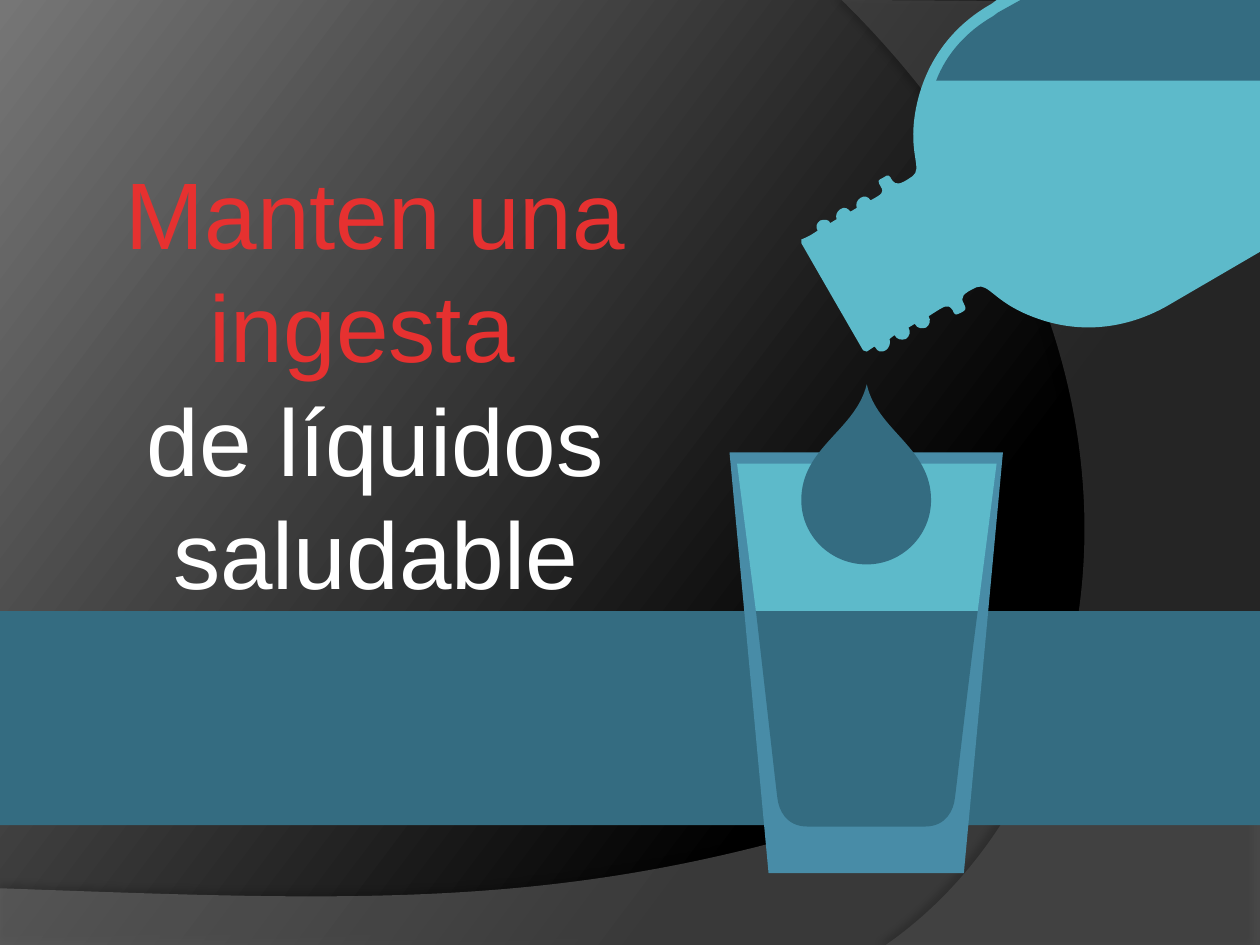
from collections import namedtuple
from copy import deepcopy
from dataclasses import dataclass

from lxml import etree
from pptx import Presentation
from pptx.dml.color import RGBColor
from pptx.enum.shapes import MSO_SHAPE
from pptx.enum.text import MSO_ANCHOR, MSO_AUTO_SIZE, PP_ALIGN
from pptx.oxml.ns import qn
from pptx.util import Inches, Pt

RECTANGLE = MSO_SHAPE.RECTANGLE
CENTER = PP_ALIGN.CENTER
TOP = MSO_ANCHOR.TOP
FIT_SHAPE = MSO_AUTO_SIZE.SHAPE_TO_FIT_TEXT
TITLE_ONLY = 5

Box = namedtuple("Box", "left top width height")


@dataclass(frozen=True)
class Theme:
    font: str = "Arial"
    title_size: int = 54
    black: str = "000000"
    glow: str = "767676"
    low_wave: str = "7F7F7F"
    side_wave: str = "5E5E5E"
    deep_water: str = "346C81"
    light_water: str = "5DBACA"
    glass: str = "488CA7"
    red: str = "E63130"
    white: str = "FFFFFF"


THEME = Theme()


def rgb(color):
    return RGBColor.from_string(color)


def inches_box(left, top, width, height):
    return Box(Inches(left), Inches(top), Inches(width), Inches(height))


def paint(shape, color):
    shape.shadow.inherit = False
    shape.fill.solid()
    shape.fill.fore_color.rgb = rgb(color)
    shape.line.fill.background()


def bend(shape, box, segments):
    lines = shape.element.findall(".//" + qn("a:lnTo"))
    for line, segment in zip(lines, segments):
        if len(segment) == 2:
            continue
        line.tag = qn("a:cubicBezTo")
        line.clear()
        for x, y in zip(segment[::2], segment[1::2]):
            etree.SubElement(
                line, qn("a:pt"),
                x=str(box.left + Inches(x) - shape.left),
                y=str(box.top + Inches(y) - shape.top))


def add_outline(page, box, color, segments):
    ends = [(box.left + Inches(part[-2]), box.top + Inches(part[-1])) for part in segments]
    builder = page.shapes.build_freeform(*ends[0], scale=1.0)
    builder.add_line_segments(ends[1:], close=True)
    shape = builder.convert_to_shape()
    bend(shape, box, segments[1:])
    paint(shape, color)
    return shape


def set_opacity(color_element, percent):
    etree.SubElement(color_element, qn("a:alpha"), val=str(percent * 1000))


def soften(shape, opacity, shadow_opacity, distance, angle):
    properties = shape.element.spPr
    set_opacity(properties.find(qn("a:solidFill")).find(qn("a:srgbClr")), opacity)
    shadow = etree.SubElement(
        properties.find(qn("a:effectLst")), qn("a:outerShdw"),
        blurRad=str(Pt(4)), dist=str(Pt(distance)), dir=str(angle * 60000),
        algn="ctr", rotWithShape="0")
    set_opacity(etree.SubElement(shadow, qn("a:srgbClr"), val=THEME.black), shadow_opacity)


def set_background(page):
    fill = page.background.fill
    fill.gradient()
    fill.gradient_angle = 143
    first, last = fill.gradient_stops
    first.color.rgb, last.color.rgb = rgb(THEME.black), rgb(THEME.glow)
    first.position, last.position = 0, 1
    stop = page.element.find(".//" + qn("a:gs"))
    middle = deepcopy(stop)
    middle.set("pos", "30000")
    stop.addnext(middle)


def draw_waves(page, box):
    low = add_outline(page, box, THEME.low_wave, [
        (0, 7.05), (0, 7.51), (10, 7.51), (10, 5.2), (5.59, 7.29, 3.91, 7.19, 0, 7.05)])
    soften(low, 45, 35, 3.5, 270)
    side = add_outline(page, box, THEME.side_wave, [
        (10, 0.02), (10, 7.5), (7.03, 7.5), (8.91, 6.19, 9.47, 2.75, 6.68, 0)])
    soften(side, 40, 45, 4, 180)


def draw_band(page, box):
    paint(page.shapes.add_shape(RECTANGLE, *box), THEME.deep_water)


def write_title(page, box):
    title = page.shapes.title
    title.left, title.top, title.width, title.height = box
    frame = title.text_frame
    frame.word_wrap = True
    frame.auto_size = FIT_SHAPE
    frame.vertical_anchor = TOP
    lines = [("Manten una ingesta ", THEME.red), ("de líquidos saludable", THEME.white)]
    for index, (text, color) in enumerate(lines):
        para = frame.add_paragraph() if index else frame.paragraphs[0]
        para.alignment = CENTER
        span = para.add_run()
        span.text = text
        span.font.name = THEME.font
        span.font.size = Pt(THEME.title_size)
        span.font.color.rgb = rgb(color)


def draw_glass(page, box):
    wall = add_outline(page, box, THEME.glass, [
        (0, 0), (2.17, 0), (1.86, 3.34), (0.31, 3.34)])
    empty_part = add_outline(page, box, THEME.light_water, [
        (0.06, 0.09), (2.12, 0.09), (1.97, 1.26), (0.21, 1.26)])
    water = add_outline(page, box, THEME.deep_water, [
        (0.21, 1.26), (0.29, 1.95, 0.37, 2.67, 0.38, 2.74),
        (0.39, 2.84, 0.45, 2.97, 0.62, 2.97), (1.55, 2.97),
        (1.72, 2.97, 1.78, 2.84, 1.79, 2.74), (1.8, 2.67, 1.88, 1.95, 1.97, 1.26)])
    return [wall, empty_part, water]


def draw_drop(page, box):
    return [add_outline(page, box, THEME.deep_water, [
        (0.52, 0), (0.43, 0.37, 0, 0.5, 0, 0.92), (0, 1.2, 0.23, 1.43, 0.52, 1.43),
        (0.8, 1.43, 1.03, 1.2, 1.03, 0.92), (1.03, 0.5, 0.6, 0.37, 0.52, 0)])]


def draw_bottle(page, box):
    upper_neck = [
        (1.91, 0), (1.87, 0.03), (1.55, 0.21, 1.34, 0.5, 1.27, 0.86),
        (1.2, 1.22, 1.33, 1.34, 1.24, 1.4), (1.14, 1.47, 1.11, 1.47, 1.08, 1.43),
        (1.06, 1.39, 1.05, 1.38, 1.01, 1.41), (0.97, 1.43, 0.96, 1.43, 0.99, 1.48),
        (1.02, 1.53, 1, 1.54, 0.91, 1.59), (0.89, 1.56, 0.86, 1.55, 0.83, 1.57),
        (0.8, 1.59, 0.79, 1.62, 0.8, 1.65), (0.75, 1.68),
        (0.73, 1.65, 0.7, 1.64, 0.67, 1.66), (0.64, 1.68, 0.63, 1.71, 0.64, 1.74),
        (0.59, 1.77), (0.58, 1.74, 0.54, 1.74, 0.51, 1.75),
        (0.48, 1.77, 0.47, 1.8, 0.49, 1.83), (0.42, 1.88, 0.36, 1.9, 0.36, 1.9)]
    mouth = [(0.36, 1.93), (0.59, 2.33), (0.85, 2.78), (0.88, 2.79), (0.94, 2.75)]
    lower_neck = [
        (0.95, 2.76), (0.96, 2.79, 1, 2.8, 1.03, 2.78), (1.06, 2.76, 1.07, 2.72, 1.06, 2.69),
        (1.1, 2.66), (1.12, 2.7, 1.16, 2.7, 1.19, 2.69), (1.22, 2.67, 1.23, 2.63, 1.21, 2.6),
        (1.26, 2.57), (1.28, 2.61, 1.32, 2.61, 1.35, 2.6), (1.38, 2.58, 1.39, 2.54, 1.37, 2.51),
        (1.51, 2.42, 1.52, 2.41, 1.56, 2.46), (1.58, 2.51, 1.59, 2.5, 1.63, 2.48),
        (1.67, 2.46, 1.67, 2.45, 1.65, 2.41), (1.62, 2.36, 1.64, 2.33, 1.75, 2.28)]
    body = [
        (1.85, 2.24, 1.89, 2.41, 2.24, 2.53), (2.58, 2.65, 2.94, 2.61, 3.26, 2.43),
        (4.22, 1.87), (5.88, 0.91), (6.28, 0.69), (6.28, 0)]
    shell = add_outline(page, box, THEME.light_water, upper_neck + mouth + lower_neck + body)
    water = add_outline(page, box, THEME.deep_water, [
        (2.1, 0), (1.92, 0.1), (1.88, 0.13), (1.67, 0.25, 1.51, 0.43, 1.43, 0.64),
        (6.18, 0.64), (6.28, 0.58), (6.28, 0)])
    return [shell, water]


def main():
    deck = Presentation()
    deck.slide_width, deck.slide_height = Inches(10), Inches(7.5)
    page = deck.slides.add_slide(deck.slide_layouts[TITLE_ONLY])
    set_background(page)
    draw_waves(page, inches_box(0, 0, 10, 7.5))
    draw_band(page, inches_box(0, 4.85, 10, 1.7))
    write_title(page, inches_box(0.3, 1.18, 5.36, 3.74))
    parts = draw_glass(page, inches_box(5.79, 3.59, 2.17, 3.34))
    parts += draw_drop(page, inches_box(6.36, 3.05, 1.03, 1.43))
    parts += draw_bottle(page, inches_box(6, 0, 6.28, 2.8))
    page.shapes.add_group_shape(parts)
    deck.save("out.pptx")


if __name__ == "__main__":
    main()
